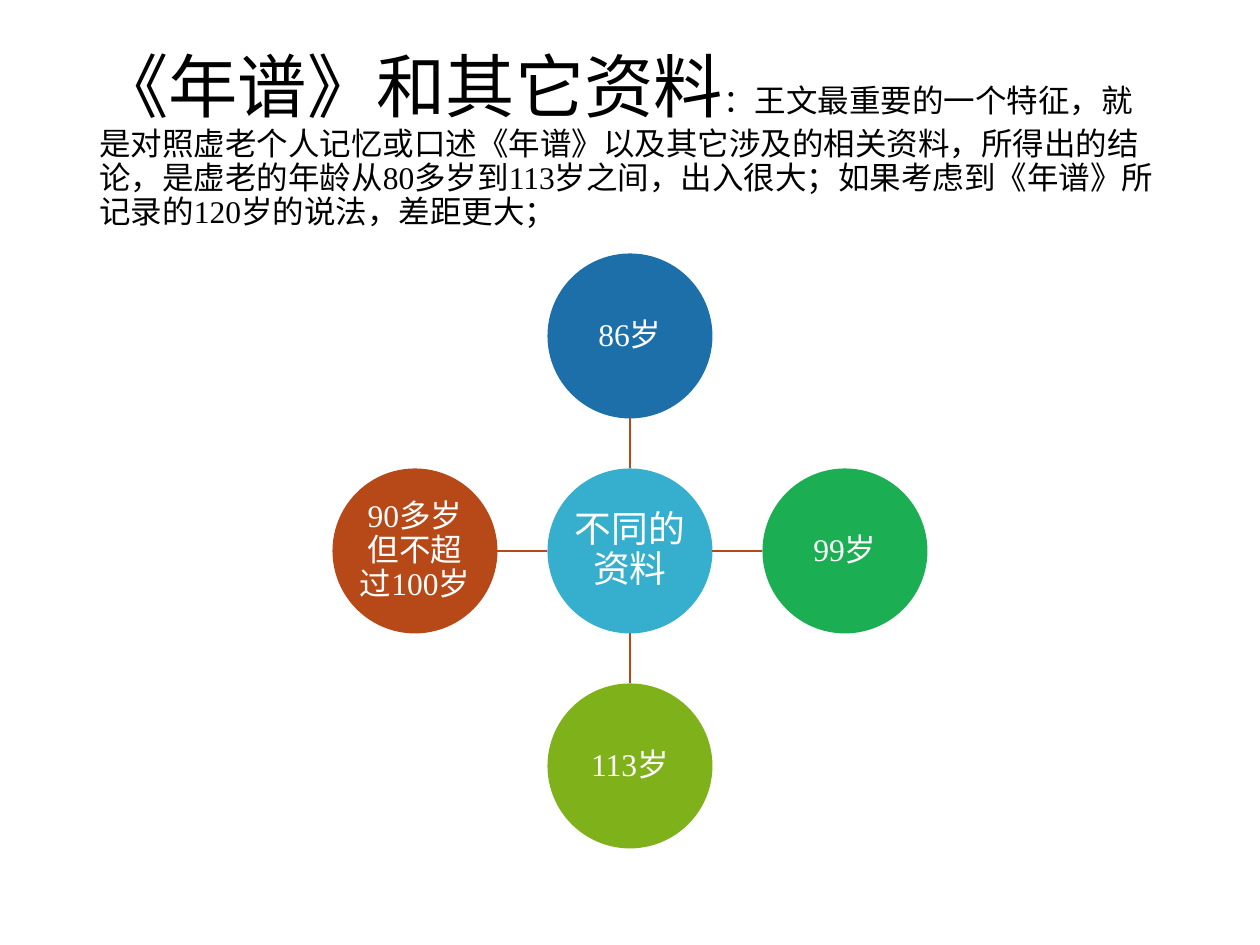
"""Build a slide with a heading and a radial diagram of ages."""
from lxml import etree
from pptx import Presentation
from pptx.dml.color import RGBColor
from pptx.enum.shapes import MSO_CONNECTOR, MSO_SHAPE
from pptx.enum.text import MSO_ANCHOR, PP_ALIGN
from pptx.oxml.ns import qn
from pptx.util import Pt

STRAIGHT = MSO_CONNECTOR.STRAIGHT
ELLIPSE = MSO_SHAPE.OVAL
MIDDLE = MSO_ANCHOR.MIDDLE
CENTER = PP_ALIGN.CENTER

FONT = "Times New Roman"
HEADING = [
    ("《年谱》和其它资料", 39.6),
    ("：王文最重要的一个特征，就是对照虚老个人记忆或口述《年谱》以及其它涉及的相关资料，"
     "所得出的结论，是虚老的年龄从80多岁到113岁之间，出入很大；"
     "如果考虑到《年谱》所记录的120岁的说法，差距更大；", 18),
]
HUB = ("不同的资料", "36AFCE", 21)
AGES = [
    ("86岁", "1D6FA9", (0, -1)),
    ("99岁", "1CAE53", (1, 0)),
    ("113岁", "7FB21A", (0, 1)),
    ("90多岁但不超过100岁", "B74919", (-1, 0)),
]
SPOKE_COLOR = "B74919"
HUB_X, HUB_Y = 630, 551
DIAMETER, PITCH = 165, 215


def px(length):
    return round(length * 914400 / 126)


def color(value):
    return RGBColor.from_string(value)


def add_heading(slide):
    heading = slide.shapes.add_textbox(px(87), px(50), px(1086), px(183))
    frame = heading.text_frame
    frame.word_wrap = True
    frame.vertical_anchor = MIDDLE
    paragraph = frame.paragraphs[0]
    paragraph.line_spacing = 0.9
    paragraph.font.name = FONT
    paragraph.font.color.rgb = color("000000")
    for wording, size in HEADING:
        run = paragraph.add_run()
        run.text = wording
        run.font.size = Pt(size)


def add_circle(slide, center_x, center_y, wording, fill, size):
    circle = slide.shapes.add_shape(
        ELLIPSE, px(center_x - DIAMETER / 2), px(center_y - DIAMETER / 2),
        px(DIAMETER), px(DIAMETER))
    circle.shadow.inherit = False
    circle.fill.solid()
    circle.fill.fore_color.rgb = color(fill)
    circle.line.fill.background()
    frame = circle.text_frame
    frame.word_wrap = True
    frame.vertical_anchor = MIDDLE
    frame.margin_left = frame.margin_right = px(1)
    frame.margin_top = frame.margin_bottom = px(1)
    paragraph = frame.paragraphs[0]
    paragraph.text = wording
    paragraph.alignment = CENTER
    paragraph.line_spacing = 0.9
    paragraph.font.name = FONT
    paragraph.font.size = Pt(size)
    paragraph.font.color.rgb = color("FFFFFF")


def add_spoke(slide, step_x, step_y):
    start, end = DIAMETER / 2, PITCH - DIAMETER / 2
    spoke = slide.shapes.add_connector(
        STRAIGHT,
        px(HUB_X + step_x * start), px(HUB_Y + step_y * start),
        px(HUB_X + step_x * end), px(HUB_Y + step_y * end))
    spoke.line.color.rgb = color(SPOKE_COLOR)
    spoke.line.width = Pt(1)
    etree.SubElement(spoke._element.spPr, qn("a:effectLst"))


def main():
    deck = Presentation()
    deck.slide_width, deck.slide_height = px(1260), px(945)
    slide = deck.slides.add_slide(deck.slide_layouts[6])
    add_heading(slide)
    add_circle(slide, HUB_X, HUB_Y, *HUB)
    for age, fill, (step_x, step_y) in AGES:
        add_spoke(slide, step_x, step_y)
        add_circle(slide, HUB_X + step_x * PITCH, HUB_Y + step_y * PITCH,
                   age, fill, 18)
    deck.save("out.pptx")


if __name__ == "__main__":
    main()
